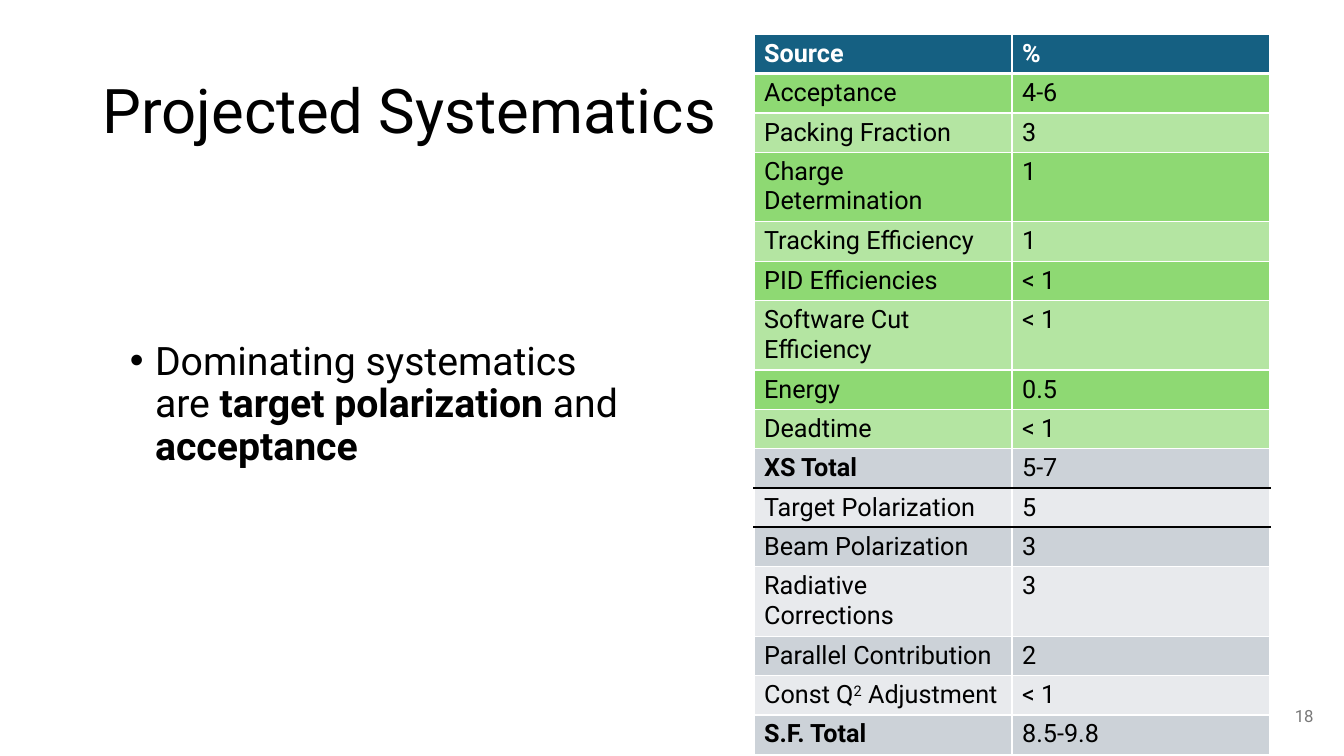
import pptx
import pptx.dml.color
import pptx.enum.text
import pptx.oxml.ns
import pptx.util
from lxml import etree

Pt = pptx.util.Pt
ALIGN = pptx.enum.text.PP_ALIGN
ANCHOR = pptx.enum.text.MSO_ANCHOR
qn = pptx.oxml.ns.qn

FONT = "Roboto"
BLACK, WHITE, GREY, HEADER = "000000", "FFFFFF", "797979", "156082"
GREENS = ("B4E5A2", "8ED973")
GREYS = ("E8EAED", "CCD2D8")

SOURCES = [
    ("Source", "%"),
    ("Acceptance", "4-6"),
    ("Packing Fraction", "3"),
    ("Charge Determination", "1"),
    ("Tracking Efficiency", "1"),
    ("PID Efficiencies", "< 1"),
    ("Software Cut Efficiency", "< 1"),
    ("Energy", "0.5"),
    ("Deadtime", "< 1"),
    ("XS Total", "5-7"),
    ("Target Polarization", "5"),
    ("Beam Polarization", "3"),
    ("Radiative Corrections", "3"),
    ("Parallel Contribution", "2"),
    ("Const Q^2^ Adjustment", "< 1"),
    ("S.F. Total", "8.5-9.8"),
]
XS_TOTAL = 9
TARGET = XS_TOTAL + 1
ROW_HEIGHT, TALL_ROW_HEIGHT = 26.64, 46.8
TALL_ROWS = (3, 6)


def rgb(color):
    return pptx.dml.color.RGBColor.from_string(color)


def style_paragraph(paragraph, size, color=BLACK, bold=None):
    font = paragraph.font
    font.name, font.size, font.bold = FONT, Pt(size), bold
    font.color.rgb = rgb(color)


def add_runs(paragraph, text):
    """Write text in which *...* is bold and ^...^ is superscript."""
    marker = "^" if "^" in text else "*"
    for index, part in enumerate(text.split(marker)):
        if not part:
            continue
        run = paragraph.add_run()
        run.text = part
        if index % 2 and marker == "*":
            run.font.bold = True
        elif index % 2:
            run.font._element.set("baseline", "30000")


def add_text(slide, left, top, width, height, text, size, color=BLACK):
    box = slide.shapes.add_textbox(Pt(left), Pt(top), Pt(width), Pt(height))
    box.text_frame.word_wrap = True
    paragraph = box.text_frame.paragraphs[0]
    add_runs(paragraph, text)
    style_paragraph(paragraph, size, color)
    return box.text_frame


def add_bullet(paragraph, indent):
    properties = paragraph._p.get_or_add_pPr()
    properties.set("marL", str(Pt(indent)))
    properties.set("indent", str(-Pt(indent)))
    font = etree.Element(qn("a:buFont"), typeface="Arial")
    mark = etree.Element(qn("a:buChar"), char="•")
    properties.find(qn("a:defRPr")).addprevious(font)
    font.addnext(mark)


def set_border(cell, side, color=WHITE, width=1):
    line = etree.SubElement(cell._tc.get_or_add_tcPr(), qn("a:ln" + side),
                            w=str(Pt(width)))
    fill = etree.SubElement(line, qn("a:solidFill"))
    etree.SubElement(fill, qn("a:srgbClr"), val=color)


def row_fill(row):
    if row == 0:
        return HEADER
    return (GREENS if row < XS_TOTAL else GREYS)[row % 2]


def add_systematics_table(slide):
    height = (ROW_HEIGHT * (len(SOURCES) - len(TALL_ROWS))
              + TALL_ROW_HEIGHT * len(TALL_ROWS))
    table = slide.shapes.add_table(len(SOURCES), 2, Pt(538.6), Pt(24.5),
                                   Pt(368.6), Pt(height)).table
    table.horz_banding = False
    rules_below = {0: (WHITE, 3), XS_TOTAL: (BLACK, 2.25), TARGET: (BLACK, 1.5)}
    for row, texts in enumerate(SOURCES):
        table.rows[row].height = Pt(
            TALL_ROW_HEIGHT if row in TALL_ROWS else ROW_HEIGHT)
        for column, text in enumerate(texts):
            cell = table.cell(row, column)
            set_border(cell, "L")
            set_border(cell, "R")
            set_border(cell, "T", *rules_below.get(row - 1, (WHITE, 1)))
            set_border(cell, "B", *rules_below.get(row, (WHITE, 1)))
            cell.fill.solid()
            cell.fill.fore_color.rgb = rgb(row_fill(row))
            cell.margin_top, cell.margin_bottom = Pt(3.4), Pt(3.1)
            paragraph = cell.text_frame.paragraphs[0]
            add_runs(paragraph, text)
            is_total = column == 0 and text.endswith("Total")
            style_paragraph(paragraph, 18, BLACK if row else WHITE,
                            row == 0 or is_total)


def set_title(slide, text):
    title = slide.shapes.title
    title.left, title.top = Pt(66), Pt(28.8)
    title.width, title.height = Pt(828), Pt(104.4)
    title.text_frame.text = text
    title.text_frame.vertical_anchor = ANCHOR.MIDDLE
    paragraph = title.text_frame.paragraphs[0]
    paragraph.alignment = ALIGN.LEFT
    paragraph.line_spacing = 0.9
    style_paragraph(paragraph, 44)


def main():
    presentation = pptx.Presentation()
    presentation.slide_width, presentation.slide_height = Pt(960), Pt(540)
    slide = presentation.slides.add_slide(presentation.slide_layouts[5])
    set_title(slide, "Projected Systematics")

    finding = add_text(
        slide, 85.7, 240.5, 368, 110,
        "Dominating systematics are *target polarization *and *acceptance*", 28)
    finding.paragraphs[0].line_spacing = 0.9
    finding.paragraphs[0].space_before = Pt(10)
    add_bullet(finding.paragraphs[0], 18)

    add_systematics_table(slide)

    page_number = add_text(slide, 729.4, 496.8, 216, 28.8, "18", 12, GREY)
    page_number.vertical_anchor = ANCHOR.MIDDLE
    page_number.paragraphs[0].alignment = ALIGN.RIGHT
    presentation.save("out.pptx")


if __name__ == "__main__":
    main()
